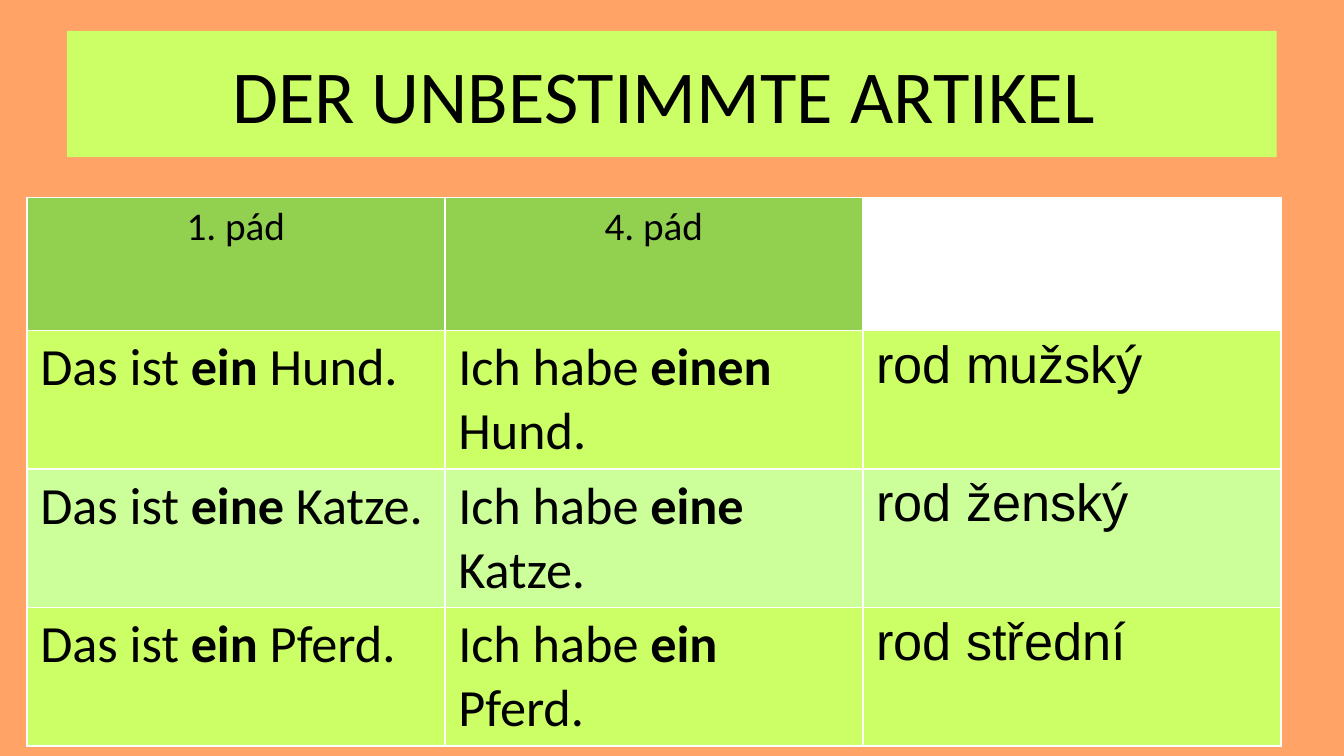
from lxml import etree
from pptx import Presentation, util as u
from pptx.dml.color import RGBColor
from pptx.enum import text
from pptx.oxml.ns import qn

ORANGE = RGBColor(0xFF, 0xA3, 0x66)
LIME = RGBColor(0xCC, 0xFF, 0x66)
MINT = RGBColor(0xCC, 0xFF, 0x99)
GREEN = RGBColor(0x92, 0xD0, 0x50)
WHITE = RGBColor(0xFF, 0xFF, 0xFF)
BLACK = RGBColor(0, 0, 0)

# 16:9 slide
WIDTH = u.Inches(10)
HEIGHT = WIDTH * 9 // 16
COL_W = u.Inches(3.11)
HEADER_H, ROW_H = u.Inches(0.99), u.Inches(1.02)

HEADERS = ["1. pád", "4. pád", ""]
# Nominative and accusative as (start, article, noun), then the gender
EXAMPLES = [
    (("Das ist ", "ein ", "Hund."), ("Ich habe ", "einen ", "Hund."), "rod mužský"),
    (("Das ist ", "eine ", "Katze."), ("Ich habe ", "eine ", "Katze."), "rod ženský"),
    (("Das ist ", "ein ", "Pferd."), ("Ich habe ", "ein ", "Pferd."), "rod střední"),
]


def write(tf, *parts, size=28, font="Calibri", align=None, before=None):
    """Write one paragraph; every second part is bold."""
    p = tf.paragraphs[0]
    p.alignment = align
    if before:
        spacing = etree.SubElement(p._p.get_or_add_pPr(), qn("a:spcBef"))
        etree.SubElement(spacing, qn("a:spcPct"), val=str(before * 1000))
    for i, part in enumerate(parts):
        r = p.add_run()
        r.text = part
        r.font.size, r.font.name = u.Pt(size), font
        r.font.bold = i % 2 == 1
        r.font.color.rgb = BLACK


def style_cell(cell, color):
    cell.margin_left = cell.margin_right = u.Inches(0.1)
    cell.margin_top = cell.margin_bottom = u.Inches(0.04)
    tcPr = cell._tc.get_or_add_tcPr()
    for side in ("lnL", "lnR", "lnT", "lnB"):
        ln = etree.SubElement(tcPr, qn("a:" + side), w=str(u.Pt(1)))
        fill = etree.SubElement(ln, qn("a:solidFill"))
        etree.SubElement(fill, qn("a:srgbClr"), val=str(WHITE))
    cell.fill.solid()
    cell.fill.fore_color.rgb = color


def add_title(s, title):
    sp = s.shapes.title
    sp.left, sp.top = int(WIDTH * 0.05), u.Inches(0.23)
    sp.width, sp.height = int(WIDTH * 0.9), u.Inches(0.94)
    sp.fill.solid()
    sp.fill.fore_color.rgb = LIME
    tf = sp.text_frame
    tf.vertical_anchor = text.MSO_ANCHOR.MIDDLE
    write(tf, title, size=40, align=text.PP_ALIGN.CENTER)


def add_article_table(s):
    rows, cols = len(EXAMPLES) + 1, len(HEADERS)
    table = s.shapes.add_table(rows, cols, u.Inches(0.2), u.Inches(1.47),
                               COL_W * cols, HEADER_H + ROW_H * len(EXAMPLES)).table
    table.first_row = table.horz_banding = False
    for col in table.columns:
        col.width = COL_W
    for i, row in enumerate(table.rows):
        row.height = ROW_H if i else HEADER_H

    # Header row
    for c, header in enumerate(HEADERS):
        cell = table.cell(0, c)
        style_cell(cell, GREEN if header else WHITE)
        if header:
            write(cell.text_frame, header, size=21,
                  align=text.PP_ALIGN.CENTER, before=20)

    # Example rows in alternating colours
    for i, (nominative, accusative, gender) in enumerate(EXAMPLES, start=1):
        for c in range(cols):
            style_cell(table.cell(i, c), LIME if i % 2 else MINT)
        write(table.cell(i, 0).text_frame, *nominative, before=20)
        write(table.cell(i, 1).text_frame, *accusative, before=20)
        write(table.cell(i, 2).text_frame, gender, font="Arial", before=20)


def main():
    prs = Presentation()
    prs.slide_width, prs.slide_height = WIDTH, HEIGHT
    s = prs.slides.add_slide(prs.slide_layouts[5])
    s.background.fill.solid()
    s.background.fill.fore_color.rgb = ORANGE
    add_title(s, "DER UNBESTIMMTE ARTIKEL ")
    add_article_table(s)
    prs.save("out.pptx")


if __name__ == "__main__":
    main()
